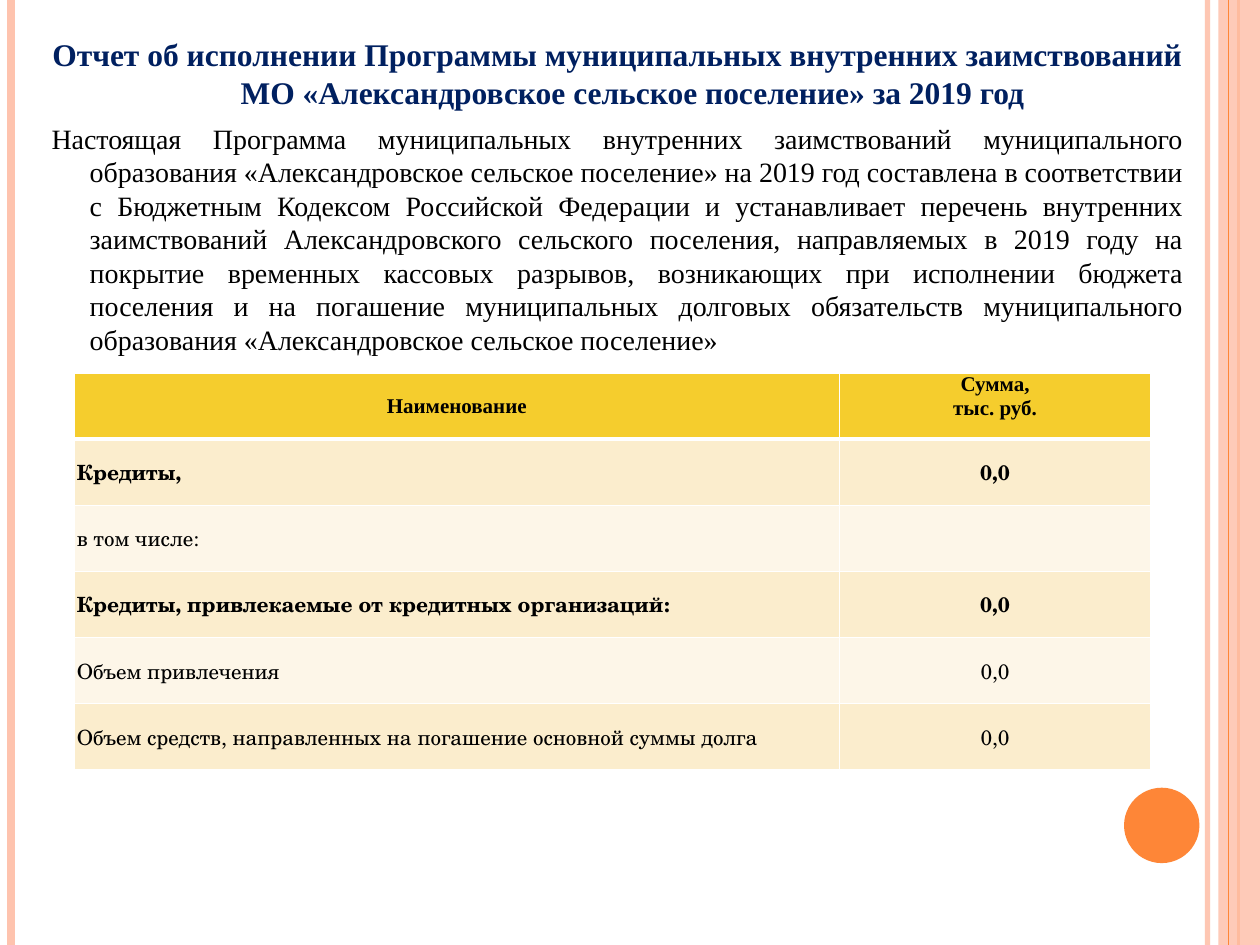
from typing import NamedTuple

from lxml.etree import SubElement
from pptx import Presentation
from pptx.dml.color import RGBColor
from pptx.enum.shapes import MSO_CONNECTOR as Link, MSO_SHAPE as Shape
from pptx.enum.text import MSO_ANCHOR as Anchor, PP_ALIGN as Align
from pptx.oxml.ns import qn
from pptx.util import Cm, Pt

PINK, ORANGE, GOLD = "FEC3AE", "FE8637", "F5CD2D"
CREAM, PALE, NAVY, BLACK, WHITE = "FBEDCD", "FDF6E8", "002060", "000000", "FFFFFF"
TIMES, SCHOLA = "Times New Roman", "TeX Gyre Schola"
HIGH = 19.05


class Stripe(NamedTuple):
    x: float
    width: float
    color: str
    alpha: int = 100


class Row(NamedTuple):
    name: str
    total: str
    bold: bool = False


class Para(NamedTuple):
    text: str
    size: int
    color: str
    bold: bool
    align: Align


BACK = [Stripe(24.34, 3, PINK, 93), Stripe(0.22, 4.5, PINK),
        Stripe(24.97, 1.5, ORANGE)]
FRONT = Stripe(24.77, 0.75, ORANGE)

PARAS = [
    Para("Отчет об исполнении Программы муниципальных внутренних заимствований "
         "МО «Александровское сельское поселение» за 2019 год ",
         18, NAVY, True, Align.CENTER),
    Para("Настоящая Программа муниципальных внутренних заимствований "
         "муниципального образования «Александровское сельское поселение» "
         "на 2019 год составлена в соответствии с Бюджетным Кодексом "
         "Российской Федерации и устанавливает перечень внутренних "
         "заимствований Александровского сельского поселения, направляемых "
         "в 2019 году на покрытие временных кассовых разрывов, возникающих "
         "при исполнении бюджета поселения и на погашение муниципальных "
         "долговых обязательств муниципального образования "
         "«Александровское сельское поселение»",
         16, BLACK, False, Align.JUSTIFY),
]

ROWS = [
    Row("Наименование", "Сумма,\nтыс. руб.", True),
    Row("Кредиты,", "0,0", True),
    Row("в том числе:", ""),
    Row("Кредиты, привлекаемые от кредитных организаций:", "0,0", True),
    Row("Объем привлечения", "0,0"),
    Row("Объем средств, направленных на погашение основной суммы долга", "0,0"),
]


def paint(part, color: str, alpha: int = 100) -> None:
    """Give a shape, line or cell a solid fill; alpha is in percent."""
    part.fill.solid()
    part.fill.fore_color.rgb = RGBColor.from_string(color)
    if alpha < 100:
        tone = part.fill._xPr.find(f"{qn('a:solidFill')}/{qn('a:srgbClr')}")
        SubElement(tone, qn("a:alpha"), val=str(alpha * 1000))


def add_stripe(slide, item: Stripe) -> None:
    line = slide.shapes.add_connector(
        Link.STRAIGHT, Cm(item.x), 0, Cm(item.x), Cm(HIGH))
    line.line.width = Pt(item.width)
    paint(line.line, item.color, item.alpha)
    SubElement(line._element.spPr, qn("a:effectLst"))


def add_block(slide, kind: Shape, box: tuple, color: str, alpha: int = 100) -> None:
    block = slide.shapes.add_shape(kind, *map(Cm, box))
    block.shadow.inherit = False
    paint(block, color, alpha)
    block.line.fill.background()


def add_run(para, text: str, size: int, face: str, color: str, bold: bool) -> None:
    run = para.add_run()
    run.text = text
    font = run.font
    font.size, font.name, font.bold = Pt(size), face, bold
    font.color.rgb = RGBColor.from_string(color)


def add_text(slide) -> None:
    frame = slide.shapes.add_textbox(
        Cm(0.79), Cm(0.58), Cm(23.32), Cm(15.72)).text_frame
    frame.word_wrap = True
    for i, item in enumerate(PARAS):
        para = frame.add_paragraph() if i else frame.paragraphs[0]
        para.alignment = item.align
        para.space_before = Pt(6)
        props = para._p.get_or_add_pPr()
        props.set("marL", str(Cm(0.77)))
        props.set("indent", str(-Cm(0.77)))
        add_run(para, item.text, item.size, TIMES, item.color, item.bold)


def add_edges(cell, top: float, low: float) -> None:
    """Draw white cell borders; top and low are widths in points."""
    props = cell._tc.get_or_add_tcPr()
    for side, width in zip("LRTB", (1, 1, top, low)):
        edge = SubElement(props, qn(f"a:ln{side}"), w=str(Pt(width)))
        tone = SubElement(edge, qn("a:solidFill"))
        SubElement(tone, qn("a:srgbClr"), val=WHITE)


def fill_cell(cell, text: str, face: str, bold: bool, align: Align) -> None:
    cell.margin_left = cell.margin_right = Cm(0.05)
    cell.margin_top = cell.margin_bottom = 0
    lines = text.split("\n")
    cell.vertical_anchor = Anchor.TOP if len(lines) > 1 else Anchor.MIDDLE
    for i, line in enumerate(lines):
        para = cell.text_frame.add_paragraph() if i else cell.text_frame.paragraphs[0]
        para.alignment = align
        if line:
            add_run(para, line, 12, face, BLACK, bold)


def add_grid(slide) -> None:
    grid = slide.shapes.add_table(
        len(ROWS), 2, Cm(1.5), Cm(7.52), Cm(21.7), Cm(8)).table
    for col, width in zip(grid.columns, (15.42, 6.28)):
        col.width = Cm(width)
    for i, row in enumerate(ROWS):
        head = i == 0
        color = GOLD if head else CREAM if i % 2 else PALE
        face = TIMES if head else SCHOLA
        for j, text in enumerate((row.name, row.total)):
            cell = grid.cell(i, j)
            add_edges(cell, 3 if i == 1 else 1, 3 if head else 1)
            paint(cell, color)
            align = Align.CENTER if head or j else Align.LEFT
            fill_cell(cell, text, face, row.bold, align)


def main() -> None:
    deck = Presentation()
    deck.slide_width, deck.slide_height = Cm(25.4), Cm(HIGH)
    slide = deck.slides.add_slide(deck.slide_layouts[6])
    for item in BACK:
        add_stripe(slide, item)
    add_block(slide, Shape.RECTANGLE, (24.56, 0, 0.84, HIGH), PINK, 87)
    add_stripe(slide, FRONT)
    add_block(slide, Shape.OVAL, (22.66, 15.88, 1.52, 1.52), ORANGE)
    add_text(slide)
    add_grid(slide)
    deck.save("out.pptx")


if __name__ == "__main__":
    main()
